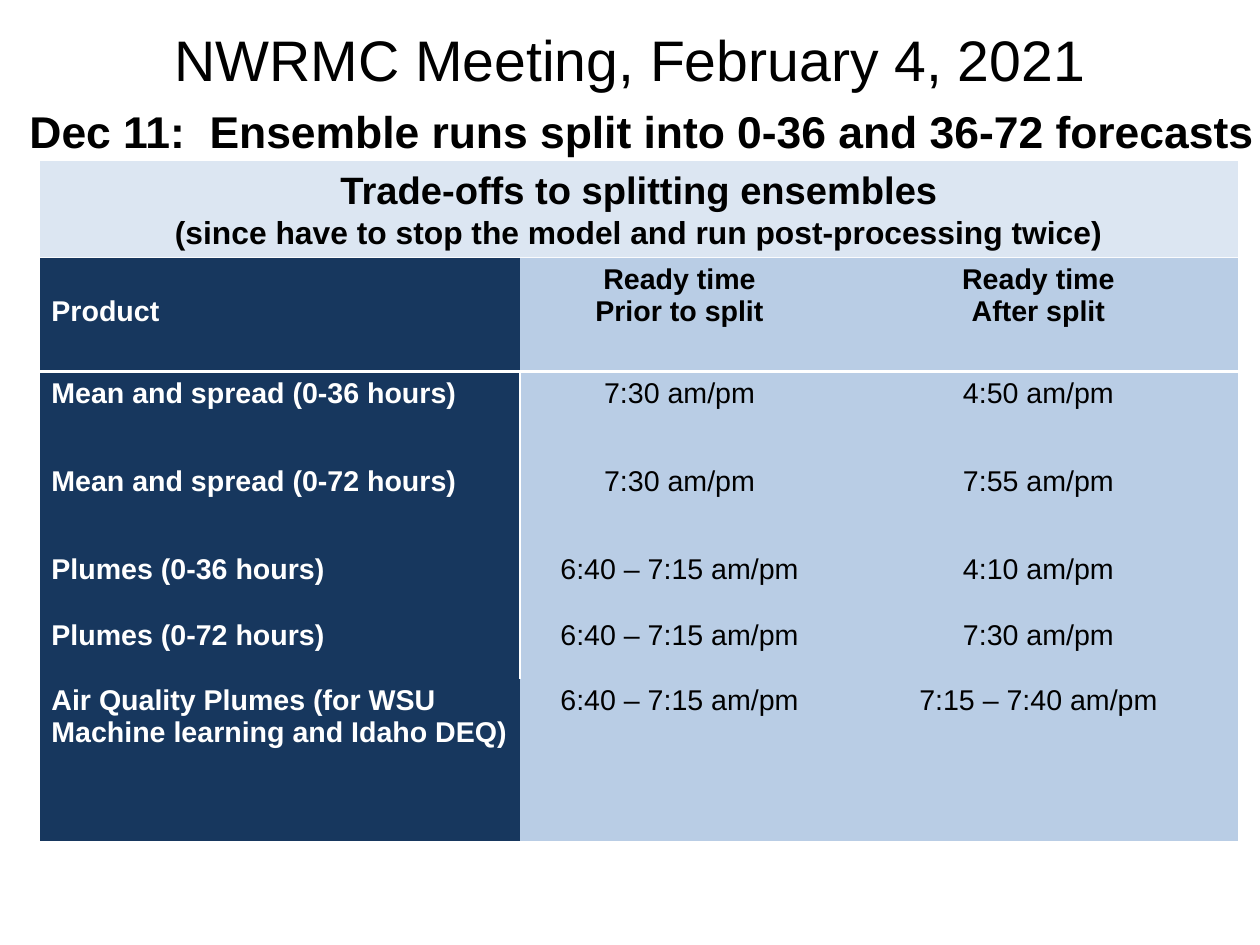
from lxml.etree import SubElement
from pptx import Presentation
from pptx.dml.color import RGBColor
from pptx.enum.shapes import MSO_SHAPE as Shape
from pptx.enum.text import MSO_ANCHOR as Anchor, PP_ALIGN as Align
from pptx.oxml.ns import qn
from pptx.util import Cm, Inches, Pt

TITLE = "NWRMC Meeting, February 4, 2021"
SUBTITLE = "Dec 11:  Ensemble runs split into 0-36 and 36-72 forecasts"
BANNER = [("Trade-offs to splitting ensembles", 24),
          ("(since have to stop the model and run post-processing twice)", 20)]
ROWS = [
    ("Product", "Ready time\nPrior to split", "Ready time\nAfter split"),
    ("Mean and spread (0-36 hours)", "7:30 am/pm", "4:50 am/pm"),
    ("Mean and spread (0-72 hours)", "7:30 am/pm", "7:55 am/pm"),
    ("Plumes (0-36 hours)", "6:40 – 7:15 am/pm", "4:10 am/pm"),
    ("Plumes (0-72 hours)", "6:40 – 7:15 am/pm", "7:30 am/pm"),
    ("Air Quality Plumes (for WSU Machine learning and Idaho DEQ)",
     "6:40 – 7:15 am/pm", "7:15 – 7:40 am/pm"),
]
COL_WIDTHS = [4.2, 2.79, 3.49]
ROW_HEIGHTS = [0.99, 0.77, 0.77, 0.58, 0.57, 1.42]
LEFT, BANNER_TOP, TABLE_TOP = 0.35, 1.41, 2.26
NAVY, BLUE, PALE, BLACK, WHITE = "17375E", "B9CDE5", "DCE6F2", "000000", "FFFFFF"
NO_STYLE = "{2D5ABB26-0587-4C30-8999-92F81FD0307C}"


def rgb(value):
    return RGBColor.from_string(value)


def paint(item, color):
    item.fill.solid()
    item.fill.fore_color.rgb = rgb(color)


def write(tf, lines, size=18, color=BLACK, bold=False, align=Align.CENTER):
    """Fill a text frame; each line is a string or a (string, size) pair."""
    for i, line in enumerate(lines):
        text, points = (line, size) if isinstance(line, str) else line
        p = tf.add_paragraph() if i else tf.paragraphs[0]
        p.alignment = align
        r = p.add_run()
        r.text = text
        r.font.name, r.font.size, r.font.bold = "Arial", Pt(points), bold
        r.font.color.rgb = rgb(color)


def add_text(slide, box, text, anchor=Anchor.TOP, **fmt):
    tf = slide.shapes.add_textbox(*map(Inches, box)).text_frame
    tf.word_wrap, tf.vertical_anchor = True, anchor
    tf.margin_left = tf.margin_right = tf.margin_top = tf.margin_bottom = 0
    write(tf, [text], **fmt)


def add_border(cell, side):
    ln = SubElement(cell._tc.get_or_add_tcPr(), qn(f"a:ln{side}"), w=str(Pt(2)))
    SubElement(SubElement(ln, qn("a:solidFill")), qn("a:srgbClr"), val=WHITE)


def add_banner(slide):
    sp = slide.shapes.add_shape(
        Shape.RECTANGLE, Inches(LEFT), Inches(BANNER_TOP),
        Inches(sum(COL_WIDTHS)), Inches(0.84))
    sp.shadow.inherit = False
    sp.line.fill.background()
    paint(sp, PALE)
    tf = sp.text_frame
    tf.word_wrap, tf.vertical_anchor = True, Anchor.TOP
    write(tf, BANNER, bold=True)


def add_times_table(slide):
    table = slide.shapes.add_table(
        len(ROWS), len(COL_WIDTHS), Inches(LEFT), Inches(TABLE_TOP),
        Inches(sum(COL_WIDTHS)), Inches(sum(ROW_HEIGHTS))).table
    table._tbl.tblPr.find(qn("a:tableStyleId")).text = NO_STYLE
    table.horz_banding = False
    for column, width in zip(table.columns, COL_WIDTHS):
        column.width = Inches(width)
    for row, height in zip(table.rows, ROW_HEIGHTS):
        row.height = Inches(height)

    for i, texts in enumerate(ROWS):
        for j, text in enumerate(texts):
            cell = table.cell(i, j)
            header, product = i == 0, j == 0
            if product and 0 < i < len(ROWS) - 1:
                add_border(cell, "R")
            if header:
                add_border(cell, "B")
            if header and product:
                cell.margin_top = Inches(0.33)
            paint(cell, NAVY if product else BLUE)
            write(cell.text_frame, text.split("\n"), bold=header or product,
                  color=WHITE if product else BLACK,
                  align=Align.LEFT if product else Align.CENTER)


def main():
    prs = Presentation()
    prs.slide_width, prs.slide_height = Cm(28), Cm(21)
    prs.element.find(qn("p:sldSz")).attrib.pop("type", None)
    slide = prs.slides.add_slide(prs.slide_layouts[6])
    add_text(slide, (0.55, 0.12, 9.92, 0.79), TITLE, Anchor.MIDDLE, size=36)
    add_text(slide, (0.2, 0.91, 10.82, 6.22), SUBTITLE, size=28, bold=True)
    add_times_table(slide)
    add_banner(slide)
    prs.save("out.pptx")


if __name__ == "__main__":
    main()
